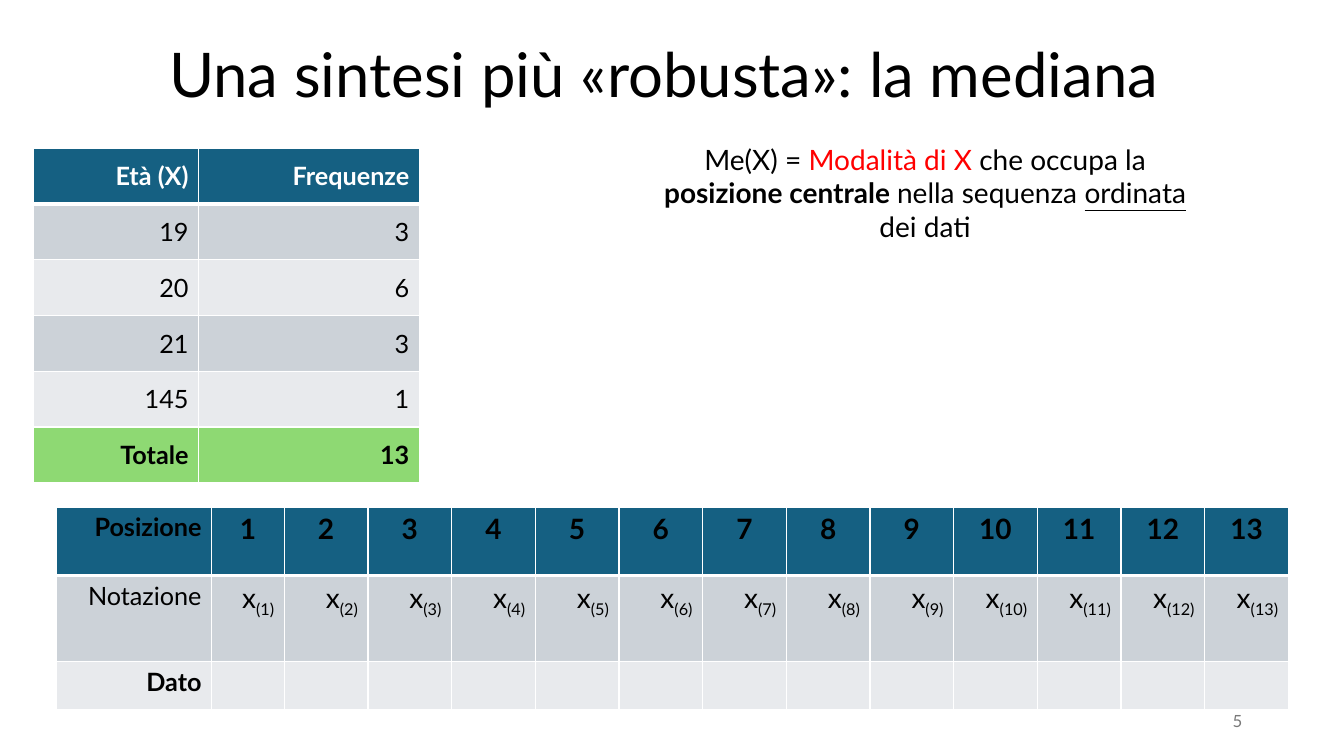
from dataclasses import dataclass

from lxml import etree
from pptx import Presentation
from pptx import util as u
from pptx.dml.color import RGBColor
from pptx.enum import text
from pptx.oxml.ns import qn


@dataclass(frozen=True)
class Theme:
    """Colours, type sizes and font of the slide."""
    font: str = "Lato"
    black: str = "000000"
    white: str = "FFFFFF"
    red: str = "FF0000"
    grey: str = "797979"
    header: str = "156082"
    dark_band: str = "CCD2D8"
    light_band: str = "E8EAED"
    total: str = "8ED973"
    title: int = 44
    body: int = 20
    label: int = 18
    number: int = 12


CENTER, RIGHT = text.PP_ALIGN.CENTER, text.PP_ALIGN.RIGHT
TOP, MIDDLE = text.MSO_ANCHOR.TOP, text.MSO_ANCHOR.MIDDLE


class SlideBuilder:
    """Adds styled elements to the current page."""

    def __init__(self, page, theme):
        self.page = page
        self.theme = theme

    def fill_paragraph(self, para, spans, size, align, color=None, bold=False):
        """Fill a paragraph with (text, style) spans."""
        para.alignment = align
        para.font.name = self.theme.font
        para.font.size = u.Pt(size)
        para.font.bold = bold
        para.font.color.rgb = RGBColor.from_string(color or self.theme.black)
        for words, style in spans:
            span = para.add_run()
            span.text = words
            if "color" in style:
                span.font.color.rgb = RGBColor.from_string(style["color"])
            if "bold" in style:
                span.font.bold = style["bold"]
            if "underline" in style:
                span.font.underline = style["underline"]
            if "baseline" in style:
                span.font._element.set("baseline", style["baseline"])

    def text_box(self, place, spans, size, align, color=None, anchor=TOP, spacing=None):
        """Add a wrapping text box with one paragraph."""
        box = self.page.shapes.add_textbox(*map(u.Inches, place))
        frame = box.text_frame
        frame.word_wrap = True
        frame.vertical_anchor = anchor
        para = frame.paragraphs[0]
        para.line_spacing = spacing
        self.fill_paragraph(para, spans, size, align, color)

    def borders(self, cell, top, bottom):
        """Draw the white borders of a cell, widths in points."""
        properties = cell._tc.get_or_add_tcPr()
        for side, width in (("L", 1), ("R", 1), ("T", top), ("B", bottom)):
            line = etree.SubElement(properties, qn(f"a:ln{side}"), w=str(u.Pt(width)))
            fill = etree.SubElement(line, qn("a:solidFill"))
            etree.SubElement(fill, qn("a:srgbClr"), val=self.theme.white)

    def table(self, left, top, widths, heights, fills, rows, anchor):
        """Add a table; each cell holds arguments for fill_paragraph, or None."""
        frame = self.page.shapes.add_table(
            len(heights), len(widths), u.Inches(left), u.Inches(top),
            u.Inches(sum(widths)), u.Inches(sum(heights)))
        grid = frame.table
        grid.first_row = grid.horz_banding = False
        for column, width in zip(grid.columns, widths):
            column.width = u.Inches(width)
        for index, (row, height, fill, contents) in enumerate(
                zip(grid.rows, heights, fills, rows)):
            row.height = u.Inches(height)
            for cell, content in zip(row.cells, contents):
                self.borders(cell, 3 if index == 1 else 1, 3 if index == 0 else 1)
                cell.fill.solid()
                cell.fill.fore_color.rgb = RGBColor.from_string(fill)
                cell.vertical_anchor = anchor
                if content:
                    self.fill_paragraph(cell.text_frame.paragraphs[0], **content)


def frequency_table(builder):
    """Add the table of ages and frequencies."""
    theme = builder.theme
    data = [("Età (X)", "Frequenze"), ("19", "3"), ("20", "6"),
            ("21", "3"), ("145", "1"), ("Totale", "13")]
    fills = [theme.header] + [theme.dark_band, theme.light_band] * 2 + [theme.total]
    last = len(data) - 1
    rows = [[dict(spans=[(value, {})], size=theme.label, align=RIGHT,
                  color=theme.white if index == 0 else theme.black,
                  bold=index in (0, last)) for value in values]
            for index, values in enumerate(data)]
    builder.table(0.33, 1.47, [1.64, 2.19], [3.32 / len(data)] * len(data),
                  fills, rows, MIDDLE)


def position_table(builder):
    """Add the table of ordered positions."""
    theme = builder.theme
    positions = range(1, 14)

    def label(words, bold):
        """Describe a row label."""
        return dict(spans=[(words, {})], size=theme.label, align=RIGHT, bold=bold)

    numbers = [dict(spans=[(str(n), {})], size=theme.body, align=CENTER, bold=True)
               for n in positions]
    notation = [dict(spans=[("x", {}), (f"({n})", {"baseline": "-25000"})],
                     size=theme.body, align=RIGHT) for n in positions]
    rows = [[label("Posizione", True)] + numbers,
            [label("Notazione", False)] + notation,
            [label("Dato", True)] + [None] * len(positions)]
    fills = [theme.header, theme.dark_band, theme.light_band]
    builder.table(0.56, 5.03, [1.54, 0.72] + [0.83] * 12, [0.68, 0.85, 0.48],
                  fills, rows, TOP)


def main():
    """Build the slide and save it."""
    deck = Presentation()
    deck.slide_width, deck.slide_height = u.Inches(13.33), u.Inches(7.5)
    theme = Theme()
    builder = SlideBuilder(deck.slides.add_slide(deck.slide_layouts[6]), theme)
    builder.text_box((0, 0.07, 13.33, 1.4),
                     [("Una sintesi più «robusta»: la mediana ", {})],
                     theme.title, CENTER, anchor=MIDDLE, spacing=0.9)
    builder.text_box((9.42, 6.95, 3, 0.4), [("5", {})], theme.number, RIGHT,
                     theme.grey, MIDDLE)
    builder.text_box((6.29, 1.36, 5.77, 1.11), [
        ("Me(X) = ", {}),
        ("Modalità di X ", {"color": theme.red}),
        ("che occupa la ", {}),
        ("posizione centrale ", {"bold": True}),
        ("nella sequenza ", {}),
        ("ordinata", {"underline": True}),
        (" dei dati", {}),
    ], theme.body, CENTER)
    frequency_table(builder)
    position_table(builder)
    deck.save("out.pptx")


if __name__ == "__main__":
    main()
